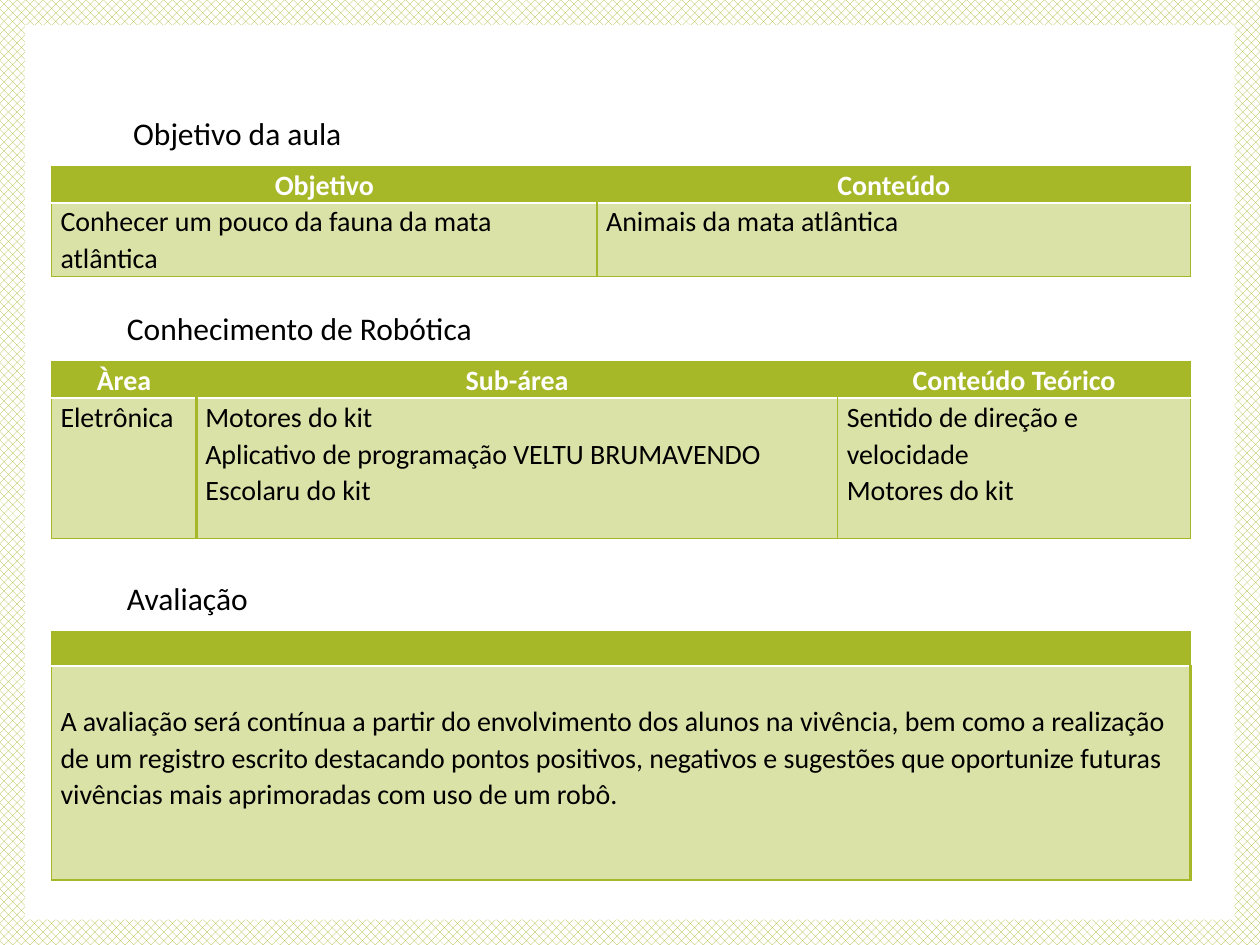
import lxml.etree
import pptx
import pptx.dml.color
import pptx.enum.dml
import pptx.enum.shapes
import pptx.enum.text
import pptx.oxml.ns
import pptx.util

Cm = pptx.util.Cm
Pt = pptx.util.Pt
qn = pptx.oxml.ns.qn
PP_ALIGN = pptx.enum.text.PP_ALIGN

GREEN = pptx.dml.color.RGBColor(0xA6, 0xB7, 0x27)
WHITE = pptx.dml.color.RGBColor(0xFF, 0xFF, 0xFF)
BLACK = pptx.dml.color.RGBColor(0x00, 0x00, 0x00)

FONT = "Calibri"
THIN, THICK = 0.79, 1.5
NO_STYLE = "{2D5ABB26-0587-4C30-8999-92F81FD0307C}"
HEADING_FORMAT = {"name": FONT, "size": Pt(18), "bold": False}
HEADER_FORMAT = {"name": FONT, "size": Pt(16), "bold": True}
BODY_FORMAT = {"name": FONT, "size": Pt(16), "bold": False}

LEFT, WIDTH = 1.04, 22.96
HEADING_HEIGHT, HEADING_GAP = 1.02, 0.16

SECTIONS = [
    {
        "heading": "Objetivo da aula",
        "indent": 1.39,
        "top": 3.35,
        "columns": [11, 11.96],
        "heights": [0.74, 1.44],
        "header": ["Objetivo", "Conteúdo"],
        "body": ["Conhecer um pouco da fauna da mata atlântica",
                 "Animais da mata atlântica"],
    },
    {
        "heading": "Conhecimento de Robótica",
        "indent": 1.27,
        "top": 7.29,
        "columns": [2.92, 12.93, 7.11],
        "heights": [0.74, 2.82],
        "header": ["Àrea", "Sub-área", "Conteúdo Teórico"],
        "body": ["Eletrônica",
                 "Motores do kit\nAplicativo de programação VELTU BRUMAVENDO Escolaru do kit",
                 "Sentido de direção e velocidade\nMotores do kit"],
    },
    {
        "heading": "Avaliação",
        "indent": 1.27,
        "top": 12.73,
        "columns": [WIDTH],
        "heights": [0.69, 4.32],
        "header": [""],
        "body": ["A avaliação será contínua a partir do envolvimento dos alunos na "
                 "vivência, bem como a realização de um registro escrito destacando "
                 "pontos positivos, negativos e sugestões que oportunize futuras "
                 "vivências mais aprimoradas com uso de um robô."],
        "body_inset": 0.74,
    },
]


def apply_format(target, values):
    for name, value in values.items():
        setattr(target, name, value)


def write_text(text_frame, text, font_format, color, paragraph_format):
    text_frame.text = text
    for paragraph in text_frame.paragraphs:
        apply_format(paragraph, paragraph_format)
        for run in paragraph.runs:
            apply_format(run.font, font_format)
            run.font.color.rgb = color
        if not paragraph.runs:
            lxml.etree.SubElement(paragraph._p, qn("a:endParaRPr"), sz="1200")


def set_borders(cell, borders):
    """Draw borders given as {side: (color, points)}, sides being L, R, T and B."""
    properties = cell._tc.get_or_add_tcPr()
    for side in "LRTB":
        if side in borders:
            color, points = borders[side]
            line = lxml.etree.SubElement(
                properties, qn(f"a:ln{side}"), w=str(Pt(points)))
            fill = lxml.etree.SubElement(line, qn("a:solidFill"))
            lxml.etree.SubElement(fill, qn("a:srgbClr"), val=str(color))


def fill_cell(cell, opacity=None):
    cell.fill.solid()
    cell.fill.fore_color.rgb = GREEN
    if opacity:
        for color in cell._tc.tcPr.findall(qn("a:solidFill") + "/" + qn("a:srgbClr")):
            lxml.etree.SubElement(color, qn("a:alpha"), val=str(opacity * 1000))


def header_borders(column, last):
    borders = {"T": (GREEN, THIN), "B": (WHITE, THICK)}
    if column == 0:
        borders["L"] = (GREEN, THIN)
    if column == last:
        borders["R"] = (GREEN, THIN)
    return borders


def body_borders(column):
    borders = {"R": (GREEN, THIN), "B": (GREEN, THIN)}
    if column == 0:
        borders.update(L=(GREEN, THIN), T=(GREEN, THIN), R=(GREEN, THICK))
    return borders


def add_backdrop(slide, left, top, width, height):
    """Patterned background with a white panel in the given box."""
    fill = slide.background.fill
    fill.patterned()
    fill.pattern = pptx.enum.dml.MSO_PATTERN.PERCENT_50
    fill.fore_color.rgb = GREEN
    fill.back_color.rgb = WHITE
    panel = slide.shapes.add_shape(
        pptx.enum.shapes.MSO_SHAPE.RECTANGLE, Cm(left), Cm(top), Cm(width), Cm(height))
    panel.shadow.inherit = False
    panel.fill.solid()
    panel.fill.fore_color.rgb = WHITE
    panel.line.fill.background()
    # The panel lies behind the title placeholder.
    slide.shapes._spTree.insert(2, panel._element)


def add_heading(shape, text, left, top, width):
    apply_format(shape, {"left": Cm(left), "top": Cm(top),
                         "width": Cm(width), "height": Cm(HEADING_HEIGHT)})
    apply_format(shape.text_frame, {
        "word_wrap": True,
        "auto_size": pptx.enum.text.MSO_AUTO_SIZE.NONE,
        "vertical_anchor": pptx.enum.text.MSO_ANCHOR.MIDDLE,
    })
    write_text(shape.text_frame, text, HEADING_FORMAT, BLACK,
               {"alignment": PP_ALIGN.LEFT})


def add_table(slide, section, left, top, width):
    columns, heights = section["columns"], section["heights"]
    frame = slide.shapes.add_table(
        2, len(columns), Cm(left), Cm(top), Cm(width), Cm(sum(heights)))
    table = frame.table
    apply_format(table, {"first_row": False, "horz_banding": False})
    table._tbl.tblPr.find(qn("a:tableStyleId")).text = NO_STYLE
    for row, height in zip(table.rows, heights):
        row.height = Cm(height)

    for index, column_width in enumerate(columns):
        table.columns[index].width = Cm(column_width)
        header, body = table.cell(0, index), table.cell(1, index)
        for cell in (header, body):
            apply_format(cell, {"margin_left": Cm(0.18), "margin_right": Cm(0.18),
                                "margin_top": 0, "margin_bottom": 0})
        body.margin_top = Cm(section.get("body_inset", 0))
        write_text(header.text_frame, section["header"][index], HEADER_FORMAT, WHITE,
                   {"alignment": PP_ALIGN.CENTER, "line_spacing": 1.07})
        write_text(body.text_frame, section["body"][index], BODY_FORMAT, BLACK,
                   {"alignment": PP_ALIGN.LEFT, "line_spacing": 1.07})
        set_borders(header, header_borders(index, len(columns) - 1))
        set_borders(body, body_borders(index))
        fill_cell(header)
        fill_cell(body, opacity=40)


def add_section(slide, heading_shape, section, left, top, width):
    """Place a heading just above a table whose top left corner is given."""
    add_heading(heading_shape, section["heading"], left + section["indent"],
                top - HEADING_GAP - HEADING_HEIGHT, 9)
    add_table(slide, section, left, top, width)


def main():
    presentation = pptx.Presentation()
    presentation.slide_width, presentation.slide_height = Cm(25.4), Cm(19.05)
    slide = presentation.slides.add_slide(presentation.slide_layouts[5])
    add_backdrop(slide, 0.51, 0.51, 24.38, 18.03)
    for index, section in enumerate(SECTIONS):
        heading = slide.shapes.title if index == 0 else slide.shapes.add_textbox(0, 0, 0, 0)
        add_section(slide, heading, section, LEFT, section["top"], WIDTH)
    presentation.save("out.pptx")


if __name__ == "__main__":
    main()
